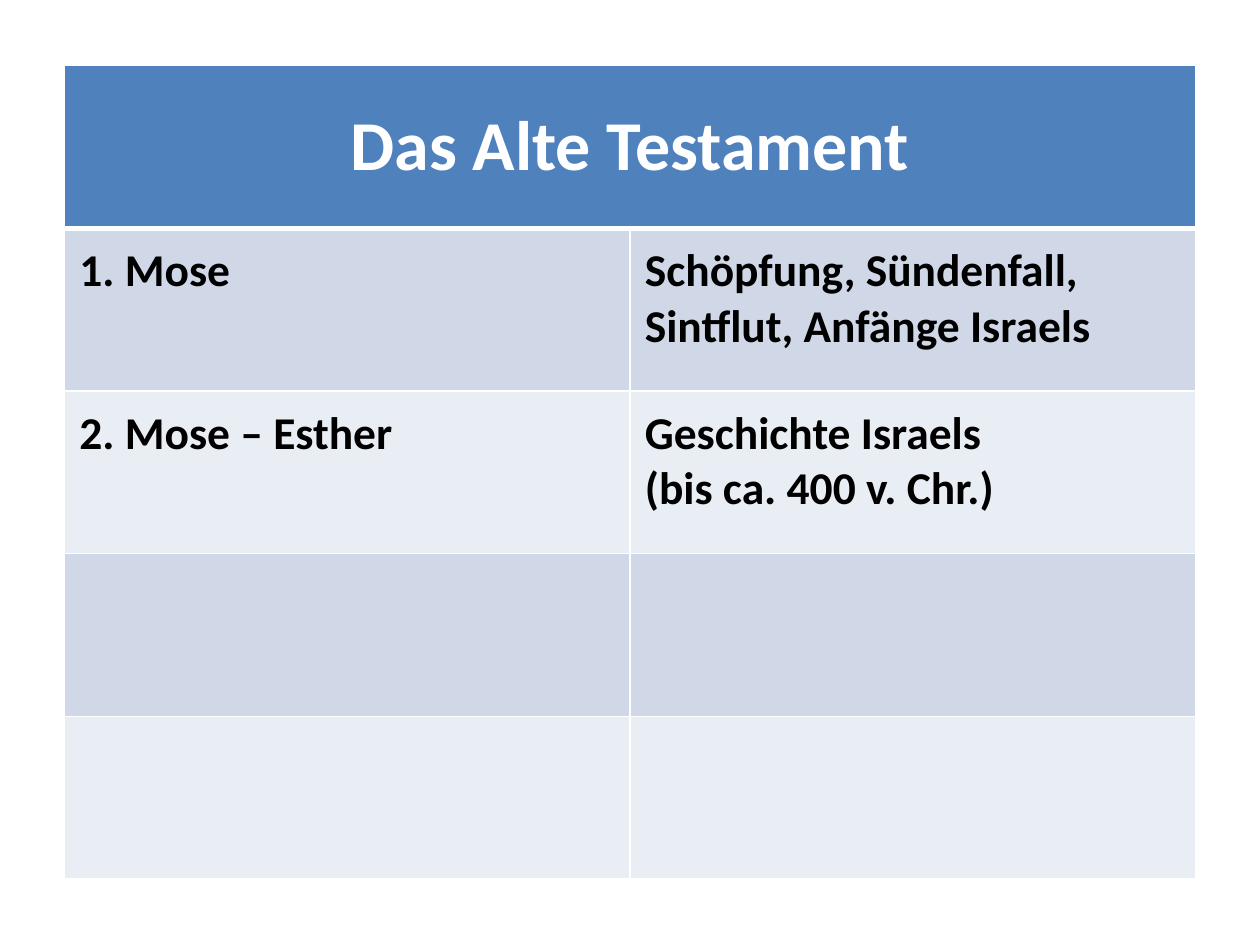
"""Build a slide with an overview table of the Old Testament."""
from dataclasses import dataclass

from lxml.etree import fromstring
from pptx import Presentation
from pptx.dml.color import RGBColor as RGB
from pptx.enum.text import MSO_ANCHOR as Anchor, PP_ALIGN as Align
from pptx.util import Cm, Pt

HEADING = "Das Alte Testament"
ROWS = [
    (["1. Mose"], ["Schöpfung, Sündenfall,", "Sintflut, Anfänge Israels"]),
    (["2. Mose – Esther"], ["Geschichte Israels", "(bis ca. 400 v. Chr.)"]),
    ([], []),
    ([], []),
]


@dataclass(frozen=True)
class Theme:
    font: str = "Calibri"
    heading_size: int = 40
    body_size: int = 26
    header: str = "4F81BD"
    bands: tuple = ("D0D8E8", "E9EDF4")
    light: str = "FFFFFF"
    dark: str = "000000"
    rule: int = 1
    header_rule: int = 3


THEME = Theme()
NS = "http://schemas.openxmlformats.org/drawingml/2006/main"
LEFT, TOP = Cm(1.3), Cm(1.32)
COL_W, ROW_H = Cm(11.4), Cm(3.28)


def set_borders(cell, top, bottom):
    widths = {"lnL": THEME.rule, "lnR": THEME.rule, "lnT": top, "lnB": bottom}
    for i, (side, width) in enumerate(widths.items()):
        ln = fromstring(
            f'<a:{side} xmlns:a="{NS}" w="{Pt(width)}"><a:solidFill>'
            f'<a:srgbClr val="{THEME.light}"/></a:solidFill></a:{side}>'
        )
        cell._tc.get_or_add_tcPr().insert(i, ln)


def paint(cell, color, top=THEME.rule, bottom=THEME.rule):
    cell.fill.solid()
    cell.fill.fore_color.rgb = RGB.from_string(color)
    set_borders(cell, top, bottom)


def write(cell, lines, size, color):
    p = cell.text_frame.paragraphs[0]
    for i, line in enumerate(lines):
        if i:
            p.add_line_break()
        p.add_run().text = line
    p.font.name, p.font.size, p.font.bold = THEME.font, Pt(size), True
    p.font.color.rgb = RGB.from_string(color)
    return p


def main():
    prs = Presentation()
    prs.slide_width, prs.slide_height = Cm(25.4), Cm(19.05)
    s = prs.slides.add_slide(prs.slide_layouts[6])
    n_rows, n_cols = len(ROWS) + 1, len(ROWS[0])
    table = s.shapes.add_table(
        n_rows, n_cols, LEFT, TOP, COL_W * n_cols, ROW_H * n_rows
    ).table
    for col in table.columns:
        col.width = COL_W
    for row in table.rows:
        row.height = ROW_H

    for cell in table.rows[0].cells:
        paint(cell, THEME.header, bottom=THEME.header_rule)
    head = table.cell(0, 0)
    head.merge(table.cell(0, n_cols - 1))
    head.vertical_anchor = Anchor.MIDDLE
    write(head, [HEADING], THEME.heading_size, THEME.light).alignment = Align.CENTER

    for r, texts in enumerate(ROWS, 1):
        for c, lines in enumerate(texts):
            cell = table.cell(r, c)
            cell.margin_left = cell.margin_top = Cm(0.3)
            cell.margin_right, cell.margin_bottom = Cm(0.4), Cm(0.2)
            paint(cell, THEME.bands[(r - 1) % len(THEME.bands)],
                  top=THEME.header_rule if r == 1 else THEME.rule)
            write(cell, lines, THEME.body_size, THEME.dark)

    prs.save("out.pptx")


if __name__ == "__main__":
    main()
